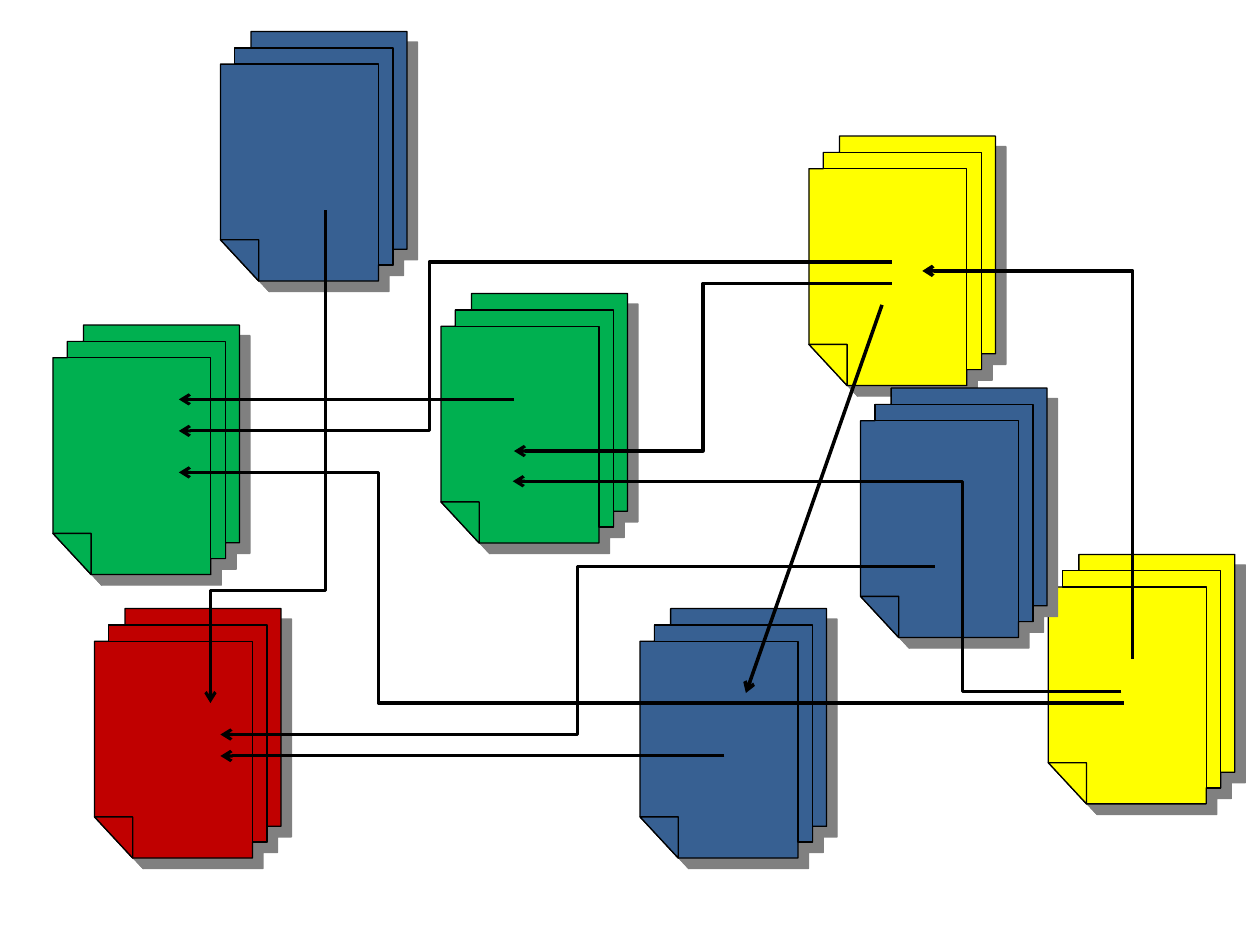
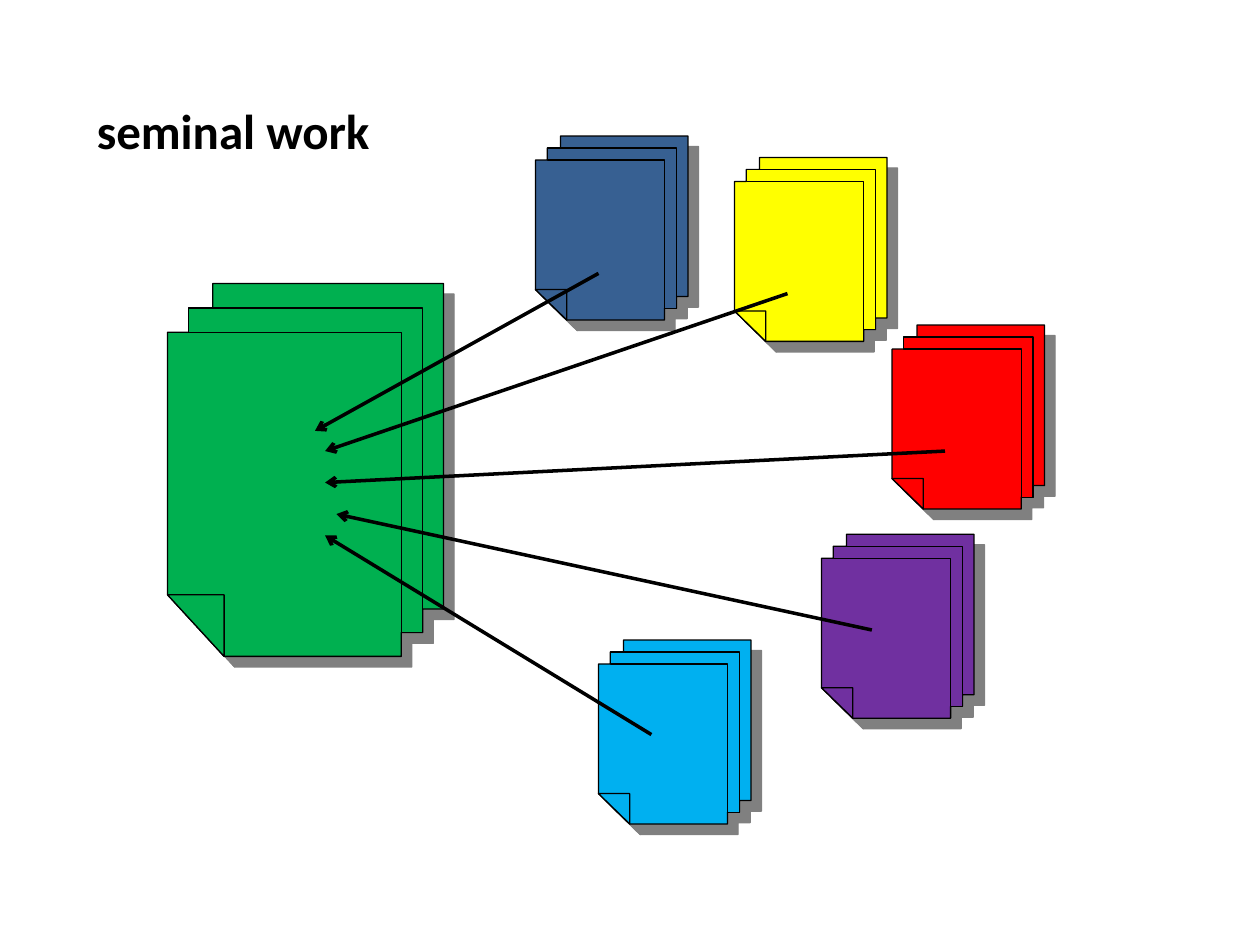
"""Builds two slides of linked document stacks."""
from copy import deepcopy

from lxml.etree import SubElement
from pptx import Presentation
from pptx.dml.color import RGBColor
from pptx.enum.shapes import MSO_CONNECTOR
from pptx.enum.text import MSO_AUTO_SIZE
from pptx.oxml.ns import qn
from pptx.util import Inches, Pt

BLACK = RGBColor(0x00, 0x00, 0x00)
NAVY = RGBColor(0x37, 0x60, 0x92)
GREEN = RGBColor(0x00, 0xB0, 0x50)
CRIMSON = RGBColor(0xC0, 0x00, 0x00)
YELLOW = RGBColor(0xFF, 0xFF, 0x00)
RED = RGBColor(0xFF, 0x00, 0x00)
PURPLE = RGBColor(0x70, 0x30, 0xA0)
SKY = RGBColor(0x00, 0xB0, 0xF0)
SHADOW = RGBColor(0x80, 0x80, 0x80)
FONT = "Calibri"

UNITS = 1000
OUTLINE = [(0, 835), (0, 131), (77, 131), (77, 66), (164, 66), (164, 0),
           (1000, 0), (1000, 873), (925, 873), (925, 936), (847, 936),
           (847, 1000), (205, 1000)]
MIDDLE_SHEET = [(164, 66), (925, 66), (925, 936), (847, 936), (847, 131),
                (77, 131), (77, 66)]
FOLDED_CORNER = [(0, 835), (205, 835), (205, 1000)]

MEDIUM = (1.48, 1.98)
LARGE = (2.19, 2.96)
SMALL = (1.21, 1.46)

WEB_STACKS = [
    (1.75, 0.25, NAVY), (0.42, 2.58, GREEN), (3.5, 2.33, GREEN),
    (0.75, 4.83, CRIMSON), (5.08, 4.83, NAVY), (8.32, 4.4, YELLOW),
    (6.42, 1.08, YELLOW), (6.83, 3.08, NAVY),
]
WEB_ELBOWS = [
    ((7.08, 2.08), (1.42, 3.42), 64900),
    ((7.08, 2.25), (4.08, 3.58), 50000),
    ((8.9, 5.49), (4.07, 3.82), 26100),
    ((5.75, 6), (1.75, 6), 50000),
    ((7.42, 4.5), (1.75, 5.83), 50000),
    ((8.92, 5.58), (1.42, 3.75), 78900),
    ((4.08, 3.17), (1.42, 3.17), 50000),
]
CITING_STACKS = [
    (4.25, 1.08, NAVY), (7.08, 2.58, RED), (5.83, 1.25, YELLOW),
    (6.52, 4.24, PURPLE), (4.75, 5.08, SKY),
]
CITATIONS = [
    ((4.75, 2.17), (2.5, 3.42)), ((6.25, 2.33), (2.58, 3.58)),
    ((7.5, 3.58), (2.58, 3.83)), ((6.92, 5), (2.67, 4.08)),
    ((5.17, 5.83), (2.58, 4.25)),
]


def split_contours(shape):
    """Give each contour its own path, so overlapping areas stay filled."""
    path_list = shape._element.spPr.find(".//" + qn("a:pathLst"))
    combined = path_list[0]
    current = None
    for step in list(combined):
        if step.tag == qn("a:moveTo"):
            current = SubElement(path_list, qn("a:path"), dict(combined.attrib))
        current.append(deepcopy(step))
    path_list.remove(combined)


def add_shadow(shape):
    """Cast a hard grey shadow to the lower right."""
    shape.shadow.inherit = False
    effects = shape._element.spPr.find(qn("a:effectLst"))
    shadow = SubElement(effects, qn("a:outerShdw"), dist=str(Pt(8.5)),
                        dir="2700000", algn="ctr", rotWithShape="0")
    SubElement(shadow, qn("a:srgbClr"), val=str(SHADOW))


def add_stack(slide, left, top, size, color):
    """Draw a stack of three sheets with a folded corner."""
    width, height = size
    scale = (Inches(width) / UNITS, Inches(height) / UNITS)
    builder = slide.shapes.build_freeform(*OUTLINE[0], scale=scale)
    builder.add_line_segments(OUTLINE[1:], close=True)
    for contour in (MIDDLE_SHEET, FOLDED_CORNER):
        builder.move_to(*contour[0])
        builder.add_line_segments(contour[1:], close=True)
    shape = builder.convert_to_shape(Inches(left), Inches(top))
    split_contours(shape)
    shape.fill.solid()
    shape.fill.fore_color.rgb = color
    shape.line.color.rgb = BLACK
    shape.line.width = Pt(0.75)
    add_shadow(shape)


def add_arrow(slide, start, end, kind=MSO_CONNECTOR.STRAIGHT, weight=2,
              arrow_end="a:tailEnd"):
    """Draw a black connector with an open arrowhead."""
    points = [Inches(value) for value in (*start, *end)]
    connector = slide.shapes.add_connector(kind, *points)
    connector.line.color.rgb = BLACK
    connector.line.width = Pt(weight)
    properties = connector._element.spPr
    SubElement(properties.find(qn("a:ln")), qn(arrow_end), type="arrow")
    SubElement(properties, qn("a:effectLst"))
    return connector


def add_elbow(slide, start, end, bend):
    """Draw an arrow with two turns, the first at the given share of its run."""
    connector = add_arrow(slide, start, end, MSO_CONNECTOR.ELBOW, 1.75)
    adjustments = connector._element.spPr.find(".//" + qn("a:avLst"))
    SubElement(adjustments, qn("a:gd"), name="adj1", fmla=f"val {bend}")
    return connector


def add_vertical_elbow(slide, start, end, bend):
    """Draw an elbow arrow that leaves downwards, as a quarter-turned elbow."""
    center_x, center_y = (start[0] + end[0]) / 2, (start[1] + end[1]) / 2
    half_run, half_rise = (end[1] - start[1]) / 2, (start[0] - end[0]) / 2
    connector = add_elbow(slide, (center_x - half_run, center_y - half_rise),
                          (center_x + half_run, center_y + half_rise), bend)
    connector._element.spPr.find(qn("a:xfrm")).set("rot", "5400000")


def add_corner(slide, start, end):
    """Draw a connector with one turn and its arrowhead at the start."""
    connector = add_arrow(slide, start, end, MSO_CONNECTOR.ELBOW,
                          arrow_end="a:headEnd")
    geometry = connector._element.spPr.find(qn("a:prstGeom"))
    geometry.set("prst", "bentConnector2")


def add_heading(slide, text):
    """Write the bold slide heading."""
    box = slide.shapes.add_textbox(Inches(0.67), Inches(0.75),
                                   Inches(3.96), Inches(0.85))
    frame = box.text_frame
    frame.word_wrap = True
    frame.auto_size = MSO_AUTO_SIZE.SHAPE_TO_FIT_TEXT
    run = frame.paragraphs[0].add_run()
    run.text = text
    run.font.name = FONT
    run.font.size = Pt(28)
    run.font.bold = True
    run.font.color.rgb = BLACK


def build_citation_web(slide):
    """Draw stacks that refer to one another."""
    for left, top, color in WEB_STACKS:
        add_stack(slide, left, top, MEDIUM, color)
    for start, end, bend in WEB_ELBOWS:
        add_elbow(slide, start, end, bend)
    add_vertical_elbow(slide, (2.58, 1.67), (1.67, 5.58), 77200)
    add_arrow(slide, (7, 2.42), (5.92, 5.5))
    add_corner(slide, (7.32, 2.15), (8.99, 5.23))


def build_seminal_work(slide):
    """Draw one large stack that all others refer to."""
    add_stack(slide, 1.33, 2.25, LARGE, GREEN)
    for left, top, color in CITING_STACKS:
        add_stack(slide, left, top, SMALL, color)
    for start, end in CITATIONS:
        add_arrow(slide, start, end)
    add_heading(slide, "seminal work")


def main():
    """Build and save the presentation."""
    presentation = Presentation()
    presentation.slide_width = Inches(10)
    presentation.slide_height = Inches(7.5)
    blank = presentation.slide_layouts[6]
    for build in (build_citation_web, build_seminal_work):
        build(presentation.slides.add_slide(blank))
    presentation.save("out.pptx")


if __name__ == "__main__":
    main()
